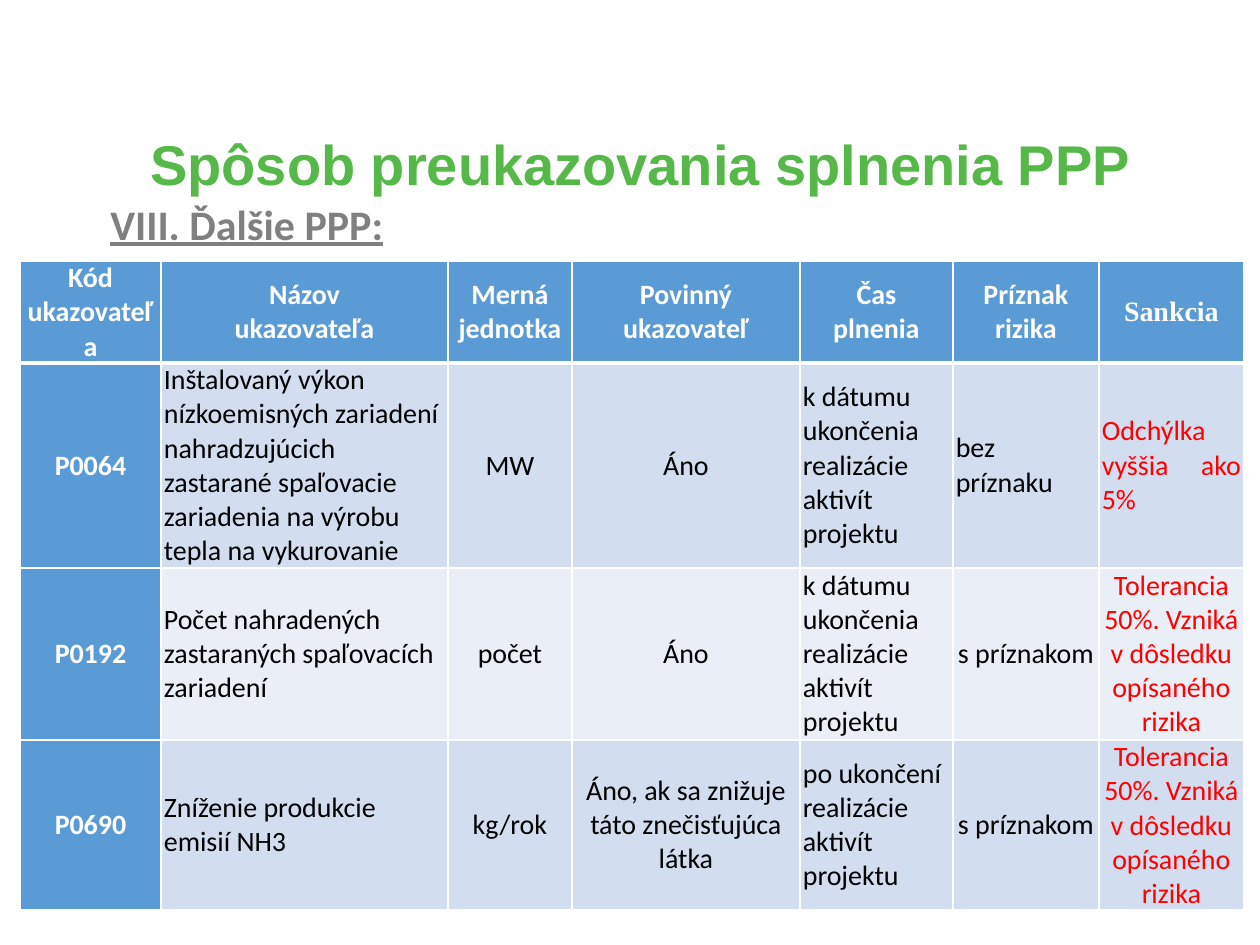
import lxml.etree
import pptx
import pptx.dml.color
import pptx.enum.text
import pptx.oxml.ns
import pptx.util

PX = 914400 // 126
ALIGN = pptx.enum.text.PP_ALIGN
MIDDLE = pptx.enum.text.MSO_ANCHOR.MIDDLE

THEME = {
    "green": "55B848", "grey": "808080", "blue": "5B9BD5", "white": "FFFFFF",
    "black": "000000", "red": "FF0000", "bands": ["D2DEEF", "EAEFF7"],
    "title_size": 32, "subtitle_size": 24, "table_size": 16,
    "title_font": "Arial", "body_font": "Calibri", "accent_font": "Times New Roman",
}


def write_text(frame, text, size=THEME["table_size"], font=THEME["body_font"],
               color=THEME["black"], bold=False, underline=False,
               align=ALIGN.CENTER, line_spacing=1.0):
    frame.word_wrap = True
    for index, line in enumerate(text.split("\n")):
        para = frame.add_paragraph() if index else frame.paragraphs[0]
        para.alignment = align
        para.line_spacing = line_spacing
        span = para.add_run()
        span.text = line
        span.font.size = pptx.util.Pt(size)
        span.font.name = font
        span.font.bold = bold
        span.font.underline = underline
        span.font.color.rgb = pptx.dml.color.RGBColor.from_string(color)


def format_cell(cell, fill, bottom_width):
    cell.vertical_anchor = MIDDLE
    cell.margin_left = cell.margin_right = 3 * PX
    cell.margin_top = cell.margin_bottom = 0
    properties = cell._tc.get_or_add_tcPr()
    for side, width in (("L", 1), ("R", 1), ("T", 1), ("B", bottom_width)):
        line = lxml.etree.SubElement(properties, pptx.oxml.ns.qn("a:ln" + side),
                                     w=str(pptx.util.Pt(width)))
        solid = lxml.etree.SubElement(line, pptx.oxml.ns.qn("a:solidFill"))
        lxml.etree.SubElement(solid, pptx.oxml.ns.qn("a:srgbClr"), val=THEME["white"])
    cell.fill.solid()
    cell.fill.fore_color.rgb = pptx.dml.color.RGBColor.from_string(fill)


deck = pptx.Presentation()
deck.slide_width = pptx.util.Inches(10)
deck.slide_height = pptx.util.Inches(7.5)
page = deck.slides.add_slide(deck.slide_layouts[6])

title_box = page.shapes.add_textbox(77 * PX, 129 * PX, 1128 * PX, 77 * PX)
title_box.text_frame.vertical_anchor = MIDDLE
write_text(title_box.text_frame, "Spôsob preukazovania splnenia PPP",
           size=THEME["title_size"], font=THEME["title_font"],
           color=THEME["green"], bold=True, line_spacing=0.9)

column_widths = [141, 287, 124, 228, 153, 146, 145]
row_heights = [102, 205, 172, 170]
headers = ["Kód ukazovateľa", "Názov\nukazovateľa", "Merná jednotka",
           "Povinný ukazovateľ", "Čas\nplnenia", "Príznak rizika", "Sankcia"]
tolerance = "Tolerancia 50%. Vzniká v dôsledku opísaného rizika"
indicators = [
    ["P0064",
     "Inštalovaný výkon nízkoemisných zariadení nahradzujúcich zastarané "
     "spaľovacie zariadenia na výrobu tepla na vykurovanie",
     "MW", "Áno", "k dátumu ukončenia realizácie aktivít projektu",
     "bez príznaku", "Odchýlka vyššia ako 5%"],
    ["P0192", "Počet nahradených zastaraných spaľovacích zariadení",
     "počet", "Áno", "k dátumu ukončenia realizácie aktivít projektu",
     "s príznakom", tolerance],
    ["P0690", "Zníženie produkcie emisií NH3",
     "kg/rok", "Áno, ak sa znižuje táto znečisťujúca látka",
     "po ukončení realizácie aktivít projektu", "s príznakom", tolerance],
]
column_aligns = [ALIGN.CENTER, ALIGN.LEFT, ALIGN.CENTER, ALIGN.CENTER,
                 ALIGN.LEFT, ALIGN.CENTER, ALIGN.CENTER]
special_aligns = {(0, 5): ALIGN.LEFT, (0, 6): ALIGN.JUSTIFY}

table = page.shapes.add_table(
    len(row_heights), len(column_widths), 20 * PX, 261 * PX,
    sum(column_widths) * PX, sum(row_heights) * PX).table
for column, width in zip(table.columns, column_widths):
    column.width = width * PX
for row, height in zip(table.rows, row_heights):
    row.height = height * PX

for column, header in enumerate(headers):
    cell = table.cell(0, column)
    format_cell(cell, THEME["blue"], 3)
    font = THEME["accent_font"] if header == "Sankcia" else THEME["body_font"]
    write_text(cell.text_frame, header, font=font, color=THEME["white"], bold=True)

last_column = len(headers) - 1
text_colors = {0: THEME["white"], last_column: THEME["red"]}
for row, indicator in enumerate(indicators):
    for column, text in enumerate(indicator):
        cell = table.cell(row + 1, column)
        is_code = column == 0
        format_cell(cell, THEME["blue"] if is_code else THEME["bands"][row % 2], 1)
        write_text(cell.text_frame, text, bold=is_code,
                   color=text_colors.get(column, THEME["black"]),
                   align=special_aligns.get((row, column), column_aligns[column]))

subtitle_box = page.shapes.add_textbox(98 * PX, 192 * PX, 1075 * PX, 63 * PX)
write_text(subtitle_box.text_frame, "VIII. Ďalšie PPP:",
           size=THEME["subtitle_size"], color=THEME["grey"],
           bold=True, underline=True, align=ALIGN.JUSTIFY)

deck.save("out.pptx")
